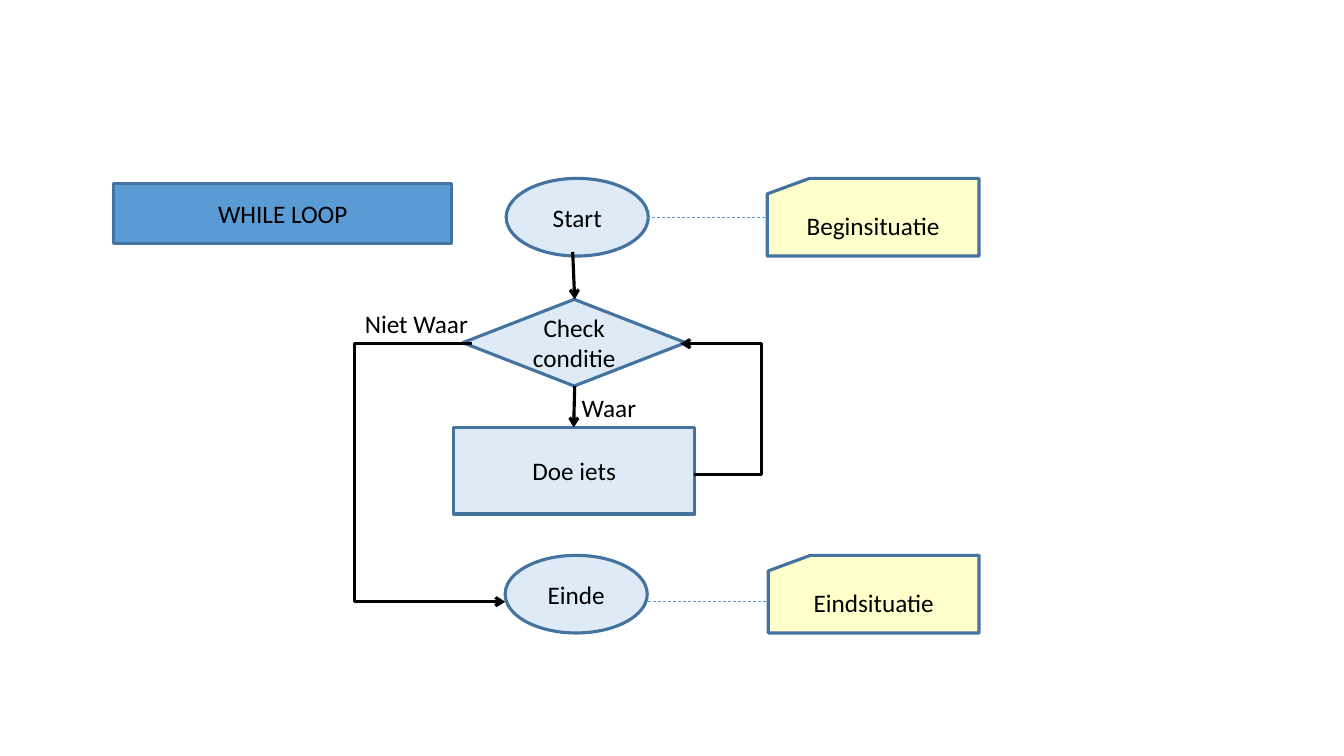
from dataclasses import dataclass

from lxml import etree
from pptx import Presentation
from pptx.dml.color import RGBColor
from pptx.enum.dml import MSO_LINE
from pptx.enum.shapes import MSO_CONNECTOR, MSO_SHAPE
from pptx.enum.text import MSO_ANCHOR, MSO_AUTO_SIZE, PP_ALIGN
from pptx.oxml.ns import qn
from pptx.util import Inches, Pt

OVAL = MSO_SHAPE.OVAL
RECT = MSO_SHAPE.RECTANGLE
DIAMOND = MSO_SHAPE.DIAMOND
CARD = MSO_SHAPE.FLOWCHART_CARD
STRAIGHT = MSO_CONNECTOR.STRAIGHT
DASH = MSO_LINE.DASH
MIDDLE = MSO_ANCHOR.MIDDLE
CENTER = PP_ALIGN.CENTER
LEFT = PP_ALIGN.LEFT
NO_FIT = MSO_AUTO_SIZE.NONE
GROW = MSO_AUTO_SIZE.SHAPE_TO_FIT_TEXT


@dataclass(frozen=True)
class Theme:
    font: str = "Calibri"
    size: Pt = Pt(18)
    thick: Pt = Pt(2.25)
    thin: Pt = Pt(0.5)
    ink: RGBColor = RGBColor(0, 0, 0)
    edge: RGBColor = RGBColor(0x43, 0x73, 0x9E)
    blue: RGBColor = RGBColor(0x5B, 0x9B, 0xD5)
    pale: RGBColor = RGBColor(0xDE, 0xEB, 0xF7)
    cream: RGBColor = RGBColor(0xFF, 0xFF, 0xCC)


THEME = Theme()


def write(shape, text, align=CENTER):
    frame = shape.text_frame
    frame.text = text
    para = frame.paragraphs[0]
    para.alignment = align
    para.font.name = THEME.font
    para.font.size = THEME.size
    para.font.color.rgb = THEME.ink
    return frame


def paint(shape, text, fill):
    """Fill and outline a shape and centre its text."""
    shape.fill.solid()
    shape.fill.fore_color.rgb = fill
    shape.line.color.rgb = THEME.edge
    shape.line.width = THEME.thick
    frame = write(shape, text)
    frame.auto_size = NO_FIT
    frame.word_wrap = True
    frame.vertical_anchor = MIDDLE


def add_node(slide, kind, box, text, fill):
    node = slide.shapes.add_shape(kind, *map(Inches, box))
    node.shadow.inherit = False
    paint(node, text, fill)


def add_label(slide, box, text):
    label = slide.shapes.add_textbox(*map(Inches, box))
    frame = write(label, text, LEFT)
    frame.word_wrap = False
    frame.auto_size = GROW


def add_head(shape):
    """End a line with an open arrowhead."""
    line = shape._element.spPr.find(qn("a:ln"))
    etree.SubElement(line, qn("a:tailEnd"), type="arrow")


def add_line(slide, start, end, color, width):
    link = slide.shapes.add_connector(STRAIGHT, *map(Inches, start + end))
    link.line.color.rgb = color
    link.line.width = width
    etree.SubElement(link._element.spPr, qn("a:effectLst"))
    return link


def add_arrow(slide, start, end):
    add_head(add_line(slide, start, end, THEME.ink, THEME.thick))


def add_bend(slide, points):
    """Draw an arrow with square corners through the points."""
    first, *rest = [(Inches(x), Inches(y)) for x, y in points]
    pen = slide.shapes.build_freeform(*first)
    pen.add_line_segments(rest, close=False)
    bend = pen.convert_to_shape()
    bend.shadow.inherit = False
    bend.fill.background()
    bend.line.color.rgb = THEME.ink
    bend.line.width = THEME.thick
    add_head(bend)


def draw_title(slide, box, text):
    title = slide.shapes.title
    title.left, title.top, title.width, title.height = map(Inches, box)
    paint(title, text, THEME.blue)


def draw_flow(slide, left, top):
    def at(x, y):
        return left + x, top + y

    nodes = (
        (OVAL, 1.5, 0, 1.41, 0.77, "Start"),
        (DIAMOND, 1.07, 1.2, 2.21, 0.86, "Check conditie"),
        (RECT, 0.98, 2.47, 2.39, 0.86, "Doe iets"),
        (OVAL, 1.49, 3.74, 1.41, 0.77, "Einde"),
    )
    for kind, x, y, wide, high, text in nodes:
        add_node(slide, kind, (*at(x, y), wide, high), text, THEME.pale)

    add_label(slide, (*at(2.15, 2.07), 0.75, 0.4), "Waar")
    add_label(slide, (*at(0, 1.24), 1.23, 0.4), "Niet Waar")

    add_arrow(slide, at(2.16, 0.73), at(2.18, 1.2))
    add_arrow(slide, at(2.18, 2.06), at(2.17, 2.47))

    check, end, work = 1.64, 4.2, 2.94
    leave = ((1.16, check), (0, check), (0, end), (1.49, end))
    again = ((3.36, work), (4.03, work), (4.03, check), (3.23, check))
    for points in (leave, again):
        add_bend(slide, [at(x, y) for x, y in points])


def draw_note(slide, box, text, drop):
    """Draw a card and the dashed line that reaches it from the left."""
    left, top, _, high = box
    add_node(slide, CARD, box, text, THEME.cream)
    y = top + drop
    link = add_line(slide, (left - 1.19, y), (left, y), THEME.blue, THEME.thin)
    link.line.dash_style = DASH


def main():
    deck = Presentation()
    deck.slide_width = Inches(13.33)
    deck.slide_height = Inches(7.5)
    slide = deck.slides.add_slide(deck.slide_layouts[5])
    draw_title(slide, (1.13, 1.82, 3.35, 0.6), "WHILE LOOP")
    draw_flow(slide, 3.52, 1.77)
    draw_note(slide, (7.61, 1.77, 2.1, 0.77), "Beginsituatie", 0.39)
    draw_note(slide, (7.62, 5.51, 2.09, 0.77), "Eindsituatie", 0.46)
    deck.save("out.pptx")


if __name__ == "__main__":
    main()
